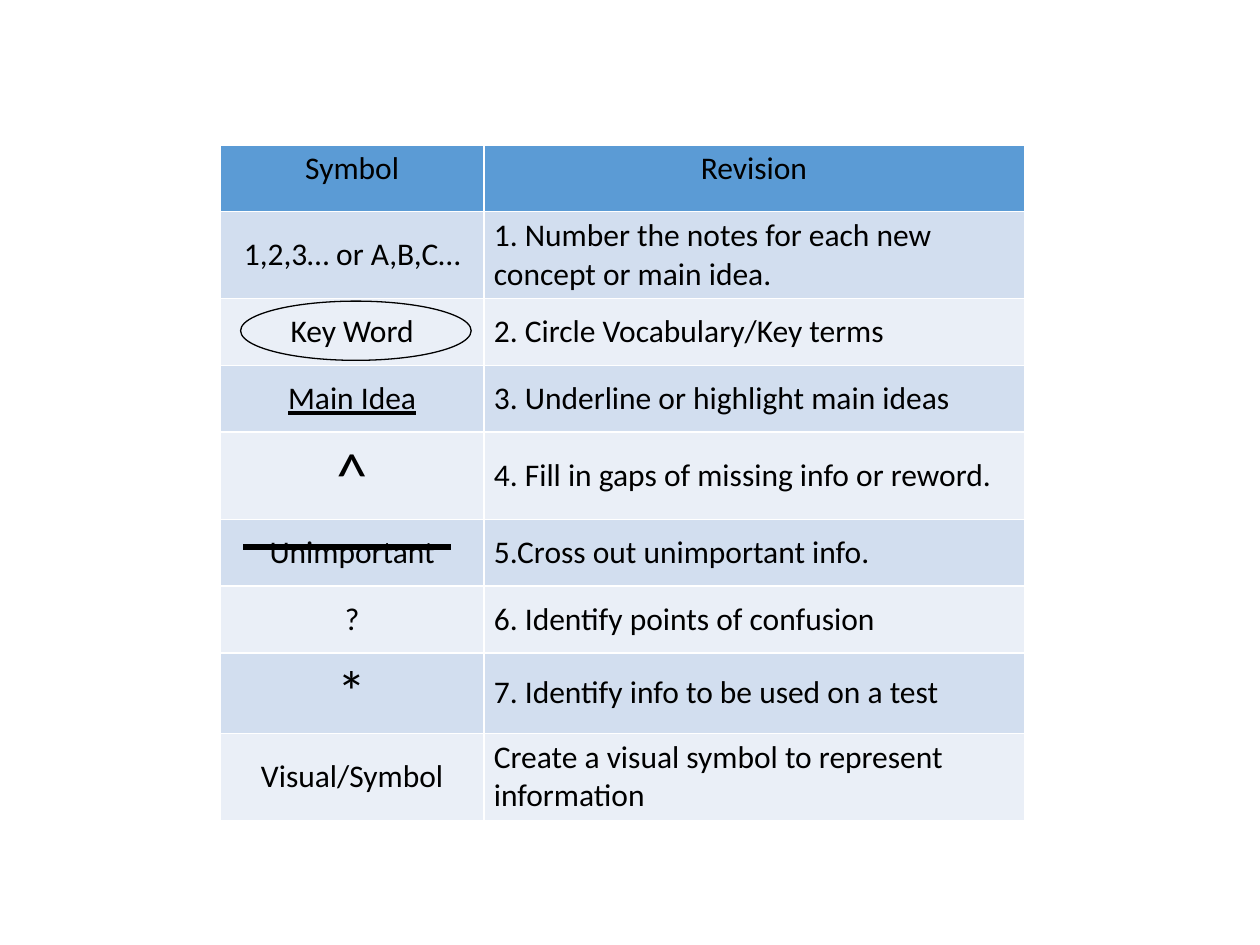
"""Build a slide with a table of note-revision symbols."""
from dataclasses import dataclass

from lxml.etree import SubElement
from pptx import Presentation
from pptx.dml.color import RGBColor
from pptx.enum.shapes import MSO_CONNECTOR as Connector, MSO_SHAPE as Shape
from pptx.enum.text import MSO_ANCHOR as Anchor, PP_ALIGN as Align
from pptx.oxml.ns import qn
from pptx.slide import Slide
from pptx.table import _Cell as Cell
from pptx.util import Inches, Pt

COLORS = {
    "ink": "000000",
    "header": "5B9BD5",
    "odd": "D2DEEF",
    "even": "EAEFF7",
}
FONT = "Calibri"
TEXT_SIZE = 18
COLUMN_WIDTHS = (2.09, 4.29)


@dataclass
class Row:
    symbol: str
    revision: str
    height: float = 0.53
    symbol_size: int = TEXT_SIZE
    underline: bool = False


ROWS = [
    Row("Symbol", "Revision"),
    Row("1,2,3… or A,B,C…", "1. Number the notes for each new concept or main idea.", 0.68),
    Row("Key Word", "2. Circle Vocabulary/Key terms"),
    Row("Main Idea", "3. Underline or highlight main ideas", underline=True),
    Row("^", "4. Fill in gaps of missing info or reword.", 0.68, symbol_size=36),
    Row("Unimportant", "5.Cross out unimportant info."),
    Row("?", "6. Identify points of confusion"),
    Row("*", "7. Identify info to be used on a test", 0.62, symbol_size=33),
    Row("Visual/Symbol", "Create a visual symbol to represent information", 0.68),
]


def color(name: str) -> RGBColor:
    return RGBColor.from_string(COLORS[name])


def fill_cell(cell: Cell, text: str, fill: str, align: Align, anchor: Anchor,
              size: int = TEXT_SIZE, underline: bool = False) -> None:
    cell.fill.solid()
    cell.fill.fore_color.rgb = color(fill)
    cell.vertical_anchor = anchor
    cell.margin_left = cell.margin_right = Inches(0.08)
    cell.margin_top = cell.margin_bottom = Inches(0.04)
    paragraph = cell.text_frame.paragraphs[0]
    paragraph.text = text
    paragraph.alignment = align
    font = paragraph.runs[0].font
    font.name = FONT
    font.size = Pt(size)
    font.bold = False
    font.underline = underline
    font.color.rgb = color("ink")


def add_revision_table(slide: Slide, left: float, top: float) -> None:
    height = sum(row.height for row in ROWS)
    table = slide.shapes.add_table(
        len(ROWS), len(COLUMN_WIDTHS), Inches(left), Inches(top),
        Inches(sum(COLUMN_WIDTHS)), Inches(height)).table
    for column, width in zip(table.columns, COLUMN_WIDTHS):
        column.width = Inches(width)
    for index, row in enumerate(ROWS):
        table.rows[index].height = Inches(row.height)
        is_header = index == 0
        fill = "header" if is_header else "odd" if index % 2 else "even"
        anchor = Anchor.TOP if is_header else Anchor.MIDDLE
        fill_cell(table.cell(index, 0), row.symbol, fill, Align.CENTER, anchor,
                  row.symbol_size, row.underline)
        fill_cell(table.cell(index, 1), row.revision, fill,
                  Align.CENTER if is_header else Align.LEFT, anchor)


def add_key_word_circle(slide: Slide, left: float, top: float,
                        width: float, height: float) -> None:
    circle = slide.shapes.add_shape(
        Shape.OVAL, Inches(left), Inches(top), Inches(width), Inches(height))
    circle.shadow.inherit = False
    circle.fill.background()
    circle.line.color.rgb = color("ink")
    circle.line.width = Pt(0.75)


def add_strike_line(slide: Slide, start: float, end: float, y: float) -> None:
    line = slide.shapes.add_connector(
        Connector.STRAIGHT, Inches(start), Inches(y), Inches(end), Inches(y))
    line.line.color.rgb = color("ink")
    line.line.width = Pt(3.75)
    SubElement(line._element.spPr, qn("a:effectLst"))


def main() -> None:
    presentation = Presentation()
    presentation.slide_width = Inches(10)
    presentation.slide_height = Inches(7.5)
    slide = presentation.slides.add_slide(presentation.slide_layouts[6])
    add_revision_table(slide, 1.75, 1.15)
    add_key_word_circle(slide, 1.91, 2.39, 1.83, 0.47)
    add_strike_line(slide, 1.93, 3.58, 4.34)
    presentation.save("out.pptx")


if __name__ == "__main__":
    main()
